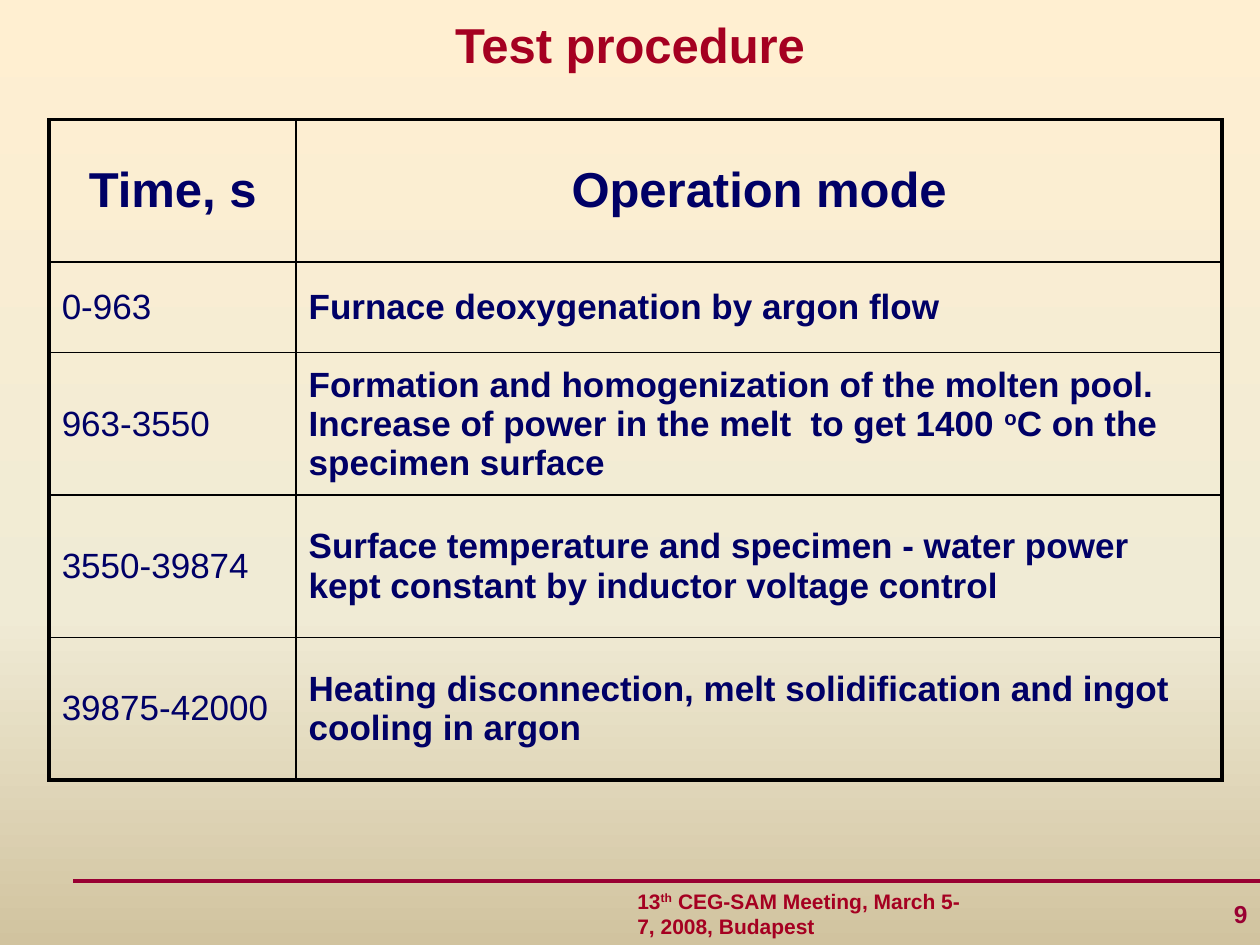
from copy import deepcopy
from pptx import Presentation
from pptx.dml.color import RGBColor
from pptx.enum.shapes import MSO_CONNECTOR as CONN
from pptx.enum.text import MSO_ANCHOR as ANCHOR, PP_ALIGN as ALIGN
from pptx.oxml import parse_xml
from pptx.oxml.ns import nsdecls
from pptx.util import Inches, Pt

RED, WINE, NAVY = "A50021", "990033", "000066"


def rgb(color):
    return RGBColor.from_string(color)


def write(tf, runs, size, color, bold=True, align=ALIGN.LEFT):
    p = tf.paragraphs[0]
    p.alignment = align
    for i, text in enumerate(runs):
        r = p.add_run()
        r.text = text
        r.font.name, r.font.size, r.font.bold = "Arial", Pt(size), bold
        r.font.color.rgb = rgb(color)
        if i == 1:
            r.font._element.set("baseline", "30000")


prs = Presentation()
prs.slide_width, prs.slide_height = Inches(10), Inches(7.5)
W = prs.slide_width
s = prs.slides.add_slide(prs.slide_layouts[6])

fill = s.background.fill
fill.gradient()
fill.gradient_angle = 270
stops = s.element.xpath(".//a:gsLst")[0]
stops.append(deepcopy(stops[0]))
for stop, (pos, color) in zip(fill.gradient_stops, [(0, "FFEFD1"), (0.65, "F0EBD5"), (1, "D1C39F")]):
    stop.position, stop.color.rgb = pos, rgb(color)

rule = s.shapes.add_connector(CONN.STRAIGHT, Inches(0.58), Inches(6.99), W, Inches(6.99))
rule.line.color.rgb, rule.line.width = rgb(WINE), Pt(2.25)
rule._element.spPr.append(parse_xml(f"<a:effectLst {nsdecls('a')}/>"))

for box, runs, size, color, align, wrap in [
    ((0, 0, 10, 0.7), ["Test procedure"], 28, RED, ALIGN.CENTER, True),
    ((4.96, 7, 2.82, 0.5), ["13", "th", " CEG-SAM Meeting, March 5-7, 2008, Budapest"], 12, RED, ALIGN.LEFT, False),
    ((7.92, 7, 2.08, 0.5), ["9"], 14, WINE, ALIGN.RIGHT, False),
]:
    tf = s.shapes.add_textbox(*map(Inches, box)).text_frame
    tf.word_wrap, tf.vertical_anchor = wrap, ANCHOR.MIDDLE
    write(tf, runs, size, color, align=align)

rows = [
    ("Time, s", ["Operation mode"]),
    ("0-963", ["Furnace deoxygenation by argon flow"]),
    ("963-3550", ["Formation and homogenization of the molten pool. Increase of power in the melt  to get 1400 ",
                  "o", "C on the specimen surface"]),
    ("3550-39874", ["Surface temperature and specimen - water power kept constant by inductor voltage control"]),
    ("39875-42000", ["Heating disconnection, melt solidification and ingot cooling in argon"]),
]
widths, heights = [1.96, 7.35], [1.13, 0.72, 1.13, 1.13, 1.13]
table = s.shapes.add_table(len(rows), 2, Inches(0.39), Inches(0.95),
                           Inches(sum(widths)), Inches(sum(heights))).table
table.first_row = table.horz_banding = False
for col, width in zip(table.columns, widths):
    col.width = Inches(width)
for row, height in zip(table.rows, heights):
    row.height = Inches(height)

last = len(rows) - 1
for i, (time, mode) in enumerate(rows):
    for j, runs in enumerate([[time], mode]):
        cell = table.cell(i, j)
        cell.vertical_anchor = ANCHOR.MIDDLE
        cell.fill.background()
        write(cell.text_frame, runs, 20 if i else 28, NAVY, bold=i == 0 or j == 1,
              align=ALIGN.LEFT if i else ALIGN.CENTER)
        outer = {"L": j == 0, "R": j == 1, "T": i == 0, "B": i == last}
        for k, (side, thick) in enumerate(outer.items()):
            cell._tc.get_or_add_tcPr().insert(k, parse_xml(
                f'<a:ln{side} {nsdecls("a")} w="{Pt(2.25 if thick else 1)}">'
                f'<a:solidFill><a:srgbClr val="000000"/></a:solidFill></a:ln{side}>'))

prs.save("out.pptx")
